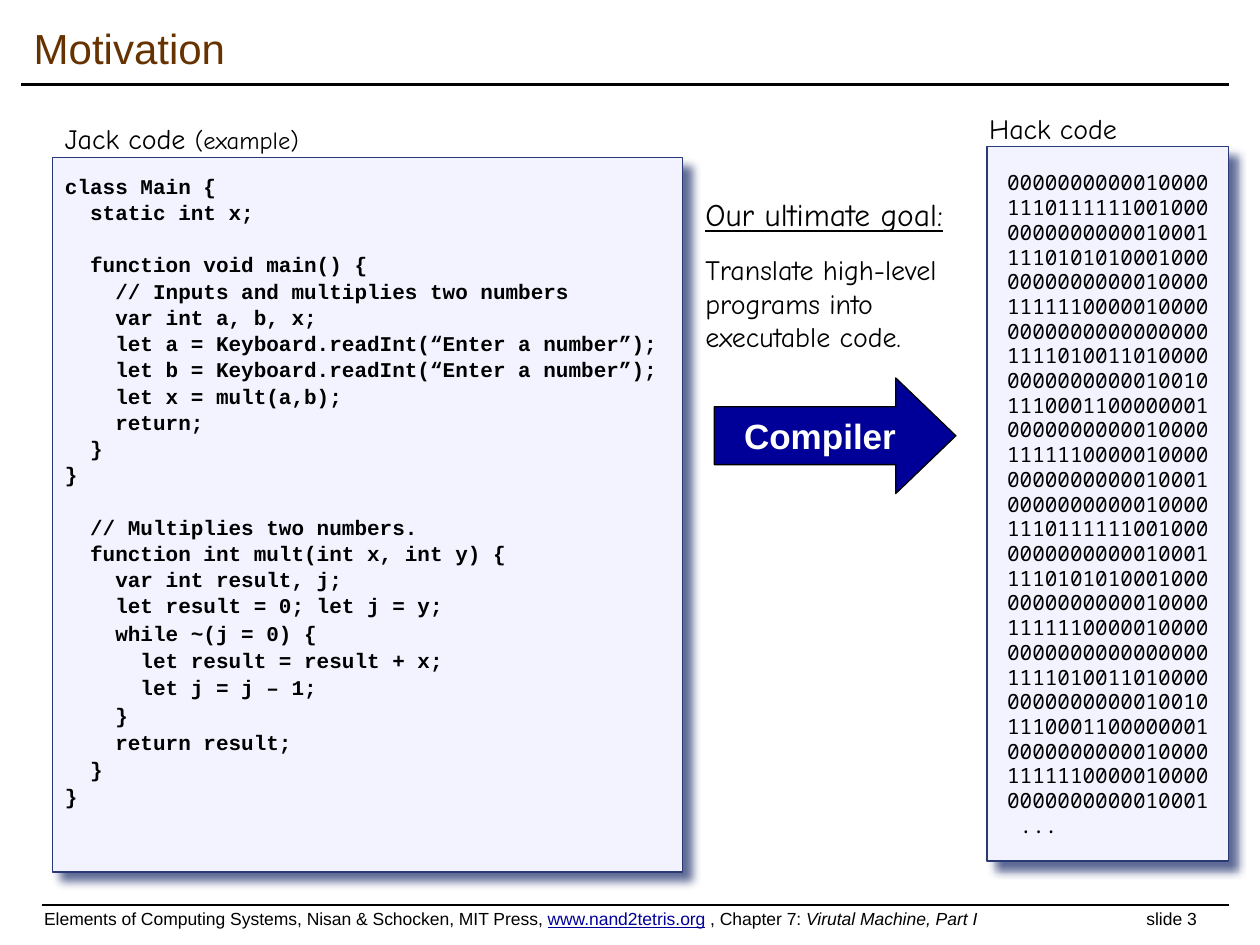
from lxml import etree
from pptx import Presentation
from pptx import util as u
from pptx.dml.color import RGBColor
from pptx.enum import shapes, text
from pptx.oxml import ns

INK, NAVY, EDGE, PALE, BROWN = "000000", "000099", "293973", "F3F3FF", "663300"
SANS, HAND, CODE, BITS = "Arial", "Comic Neue", "Courier New", "Noto Sans Mono"

JACK = """class Main {
  static int x;

  function void main() {
    // Inputs and multiplies two numbers
    var int a, b, x;
    let a = Keyboard.readInt(“Enter a number”);
    let b = Keyboard.readInt(“Enter a number”);
    let x = mult(a,b);
    return;
  }
}

  // Multiplies two numbers.
  function int mult(int x, int y) {
    var int result, j;
    let result = 0; let j = y;
    while ~(j = 0) {
      let result = result + x;
      let j = j – 1;
    }
    return result;
  }
}"""

HACK = """0000000000010000
1110111111001000
0000000000010001
1110101010001000
0000000000010000
1111110000010000
0000000000000000
1111010011010000
0000000000010010
1110001100000001
0000000000010000
1111110000010000
0000000000010001"""


def tint(code):
    return RGBColor.from_string(code)


def node(up, tag, **attrs):
    return etree.SubElement(up, ns.qn(tag), {k: str(v) for k, v in attrs.items()})


class Deck:
    def __init__(self):
        self.prs = Presentation()
        self.prs.slide_width, self.prs.slide_height = u.Cm(25.4), u.Cm(19.05)
        self.slide = self.prs.slides.add_slide(self.prs.slide_layouts[6])

    def frame(self, shape, mid=False, pad=(0.25, 0.13), wrap=True):
        body = shape.text_frame
        body.word_wrap = wrap
        body.vertical_anchor = text.MSO_ANCHOR.MIDDLE if mid else text.MSO_ANCHOR.TOP
        body.margin_left = body.margin_right = u.Cm(pad[0])
        body.margin_top = body.margin_bottom = u.Cm(pad[1])
        return body

    def label(self, *box, mid=False):
        shape = self.slide.shapes.add_textbox(*map(u.Cm, box))
        return self.frame(shape, mid)

    def para(self, body, first=False, align="LEFT", gap=0, pitch=None):
        p = body.paragraphs[0] if first else body.add_paragraph()
        p.alignment = getattr(text.PP_ALIGN, align)
        p.space_before = u.Pt(gap)
        if pitch:
            p.line_spacing = u.Pt(pitch)
        return p

    def run(self, p, words, size, face, color=INK, bold=False, ital=False, under=False):
        r = p.add_run()
        r.text = words
        f = r.font
        f.size, f.name, f.bold, f.italic, f.underline = u.Pt(size), face, bold, ital, under
        f.color.rgb = tint(color)

    def rule(self, left, top, right, width):
        line = self.slide.shapes.add_connector(
            shapes.MSO_CONNECTOR.STRAIGHT, *map(u.Cm, (left, top, right, top)))
        line.line.color.rgb = tint(INK)
        line.line.width = u.Pt(width)
        node(line.element.spPr, "a:effectLst")

    def form(self, kind, box, fill, edge):
        shape = self.slide.shapes.add_shape(kind, *map(u.Cm, box))
        shape.shadow.inherit = False
        shape.fill.solid()
        shape.fill.fore_color.rgb = tint(fill)
        shape.line.color.rgb = tint(edge)
        shape.line.width = u.Pt(0.75)
        return shape

    def panel(self, *box):
        shape = self.form(shapes.MSO_SHAPE.RECTANGLE, box, PALE, EDGE)
        glow = node(shape.element.spPr.find(ns.qn("a:effectLst")), "a:outerShdw",
                    blurRad=u.Pt(5), dist=u.Pt(7.1), dir=45 * 60000,
                    algn="ctr", rotWithShape=0)
        node(node(glow, "a:srgbClr", val=EDGE), "a:alpha", val=75000)
        return shape


def main():
    deck = Deck()

    # Title and rules
    deck.rule(0.43, 1.7, 24.77, 2)
    deck.rule(0.84, 18.24, 24.77, 1)
    p = deck.para(deck.label(0.43, 0.22, 24.33, 1.47, mid=True), first=True)
    deck.run(p, "Motivation", 24, SANS, BROWN)

    # Footer, with the slide number at a tab stop
    p = deck.para(deck.label(0.64, 18.17, 24.13, 0.69, mid=True), first=True)
    tabs = node(p._p.get_or_add_pPr(), "a:tabLst")
    node(tabs, "a:tab", pos=u.Cm(22.22), algn="l")
    deck.run(p, "Elements of Computing Systems, Nisan & Schocken, MIT Press, ", 10, SANS)
    deck.run(p, "www.nand2tetris.org", 10, SANS, NAVY, under=True)
    deck.run(p, " , Chapter 7: ", 10, SANS)
    deck.run(p, "Virutal Machine, Part I", 10, SANS, ital=True)
    deck.run(p, "\tslide 3", 10, SANS)

    # Jack code: an empty source line becomes space before the next one
    body = deck.frame(deck.panel(1.06, 3.18, 12.7, 14.4), pad=(0.25, 0.29))
    gap = 0
    for i, row in enumerate(JACK.split("\n")):
        if not row:
            gap = 15
            continue
        p = deck.para(body, first=i == 0, gap=gap, pitch=15 if i < 17 else 15.6)
        deck.run(p, row, 12, CODE, bold=True)
        gap = 0
    p = deck.para(deck.label(1.06, 2.33, 5.72, 1.06), first=True)
    deck.run(p, "Jack code ", 16, HAND)
    deck.run(p, "(example)", 14, HAND)

    # Goal and compiler arrow
    body = deck.label(13.97, 3.81, 5.7, 3.6)
    deck.run(deck.para(body, first=True), "Our ultimate goal:", 18, HAND, under=True)
    deck.run(deck.para(body, gap=11.2),
             "Translate high-level programs into executable code.", 16, HAND)
    arrow = deck.form(shapes.MSO_SHAPE.RIGHT_ARROW, (14.4, 7.62, 4.87, 2.33), NAVY, INK)
    arrow.adjustments[1] = 0.52
    p = deck.para(deck.frame(arrow, mid=True, wrap=False), first=True, align="CENTER")
    deck.run(p, "Compiler", 20, SANS, "FFFFFF", bold=True)

    # Hack code: the block of words runs twice
    body = deck.frame(deck.panel(19.9, 2.96, 4.87, 14.4), mid=True, pad=(0.15, 0.23))
    for i, row in enumerate(HACK.split("\n") * 2):
        p = deck.para(body, first=i == 0, align="CENTER", pitch=14.13)
        deck.run(p, row, 12, BITS)
    deck.run(deck.para(body, pitch=14.13), "  ...", 12, BITS)
    p = deck.para(deck.label(19.69, 2.12, 3.81, 1.06), first=True)
    deck.run(p, "Hack code", 16, HAND)

    deck.prs.save("out.pptx")


if __name__ == "__main__":
    main()
